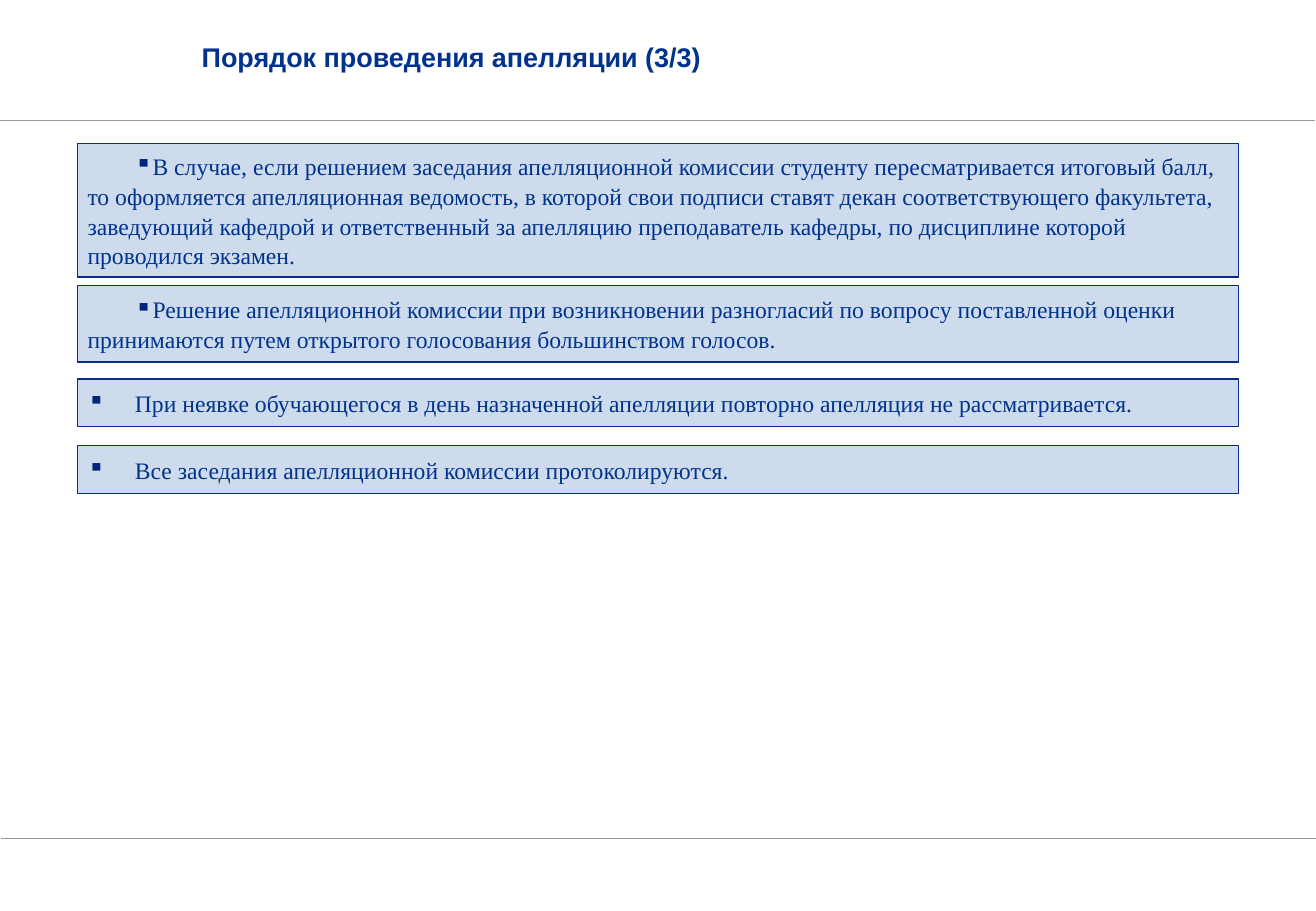
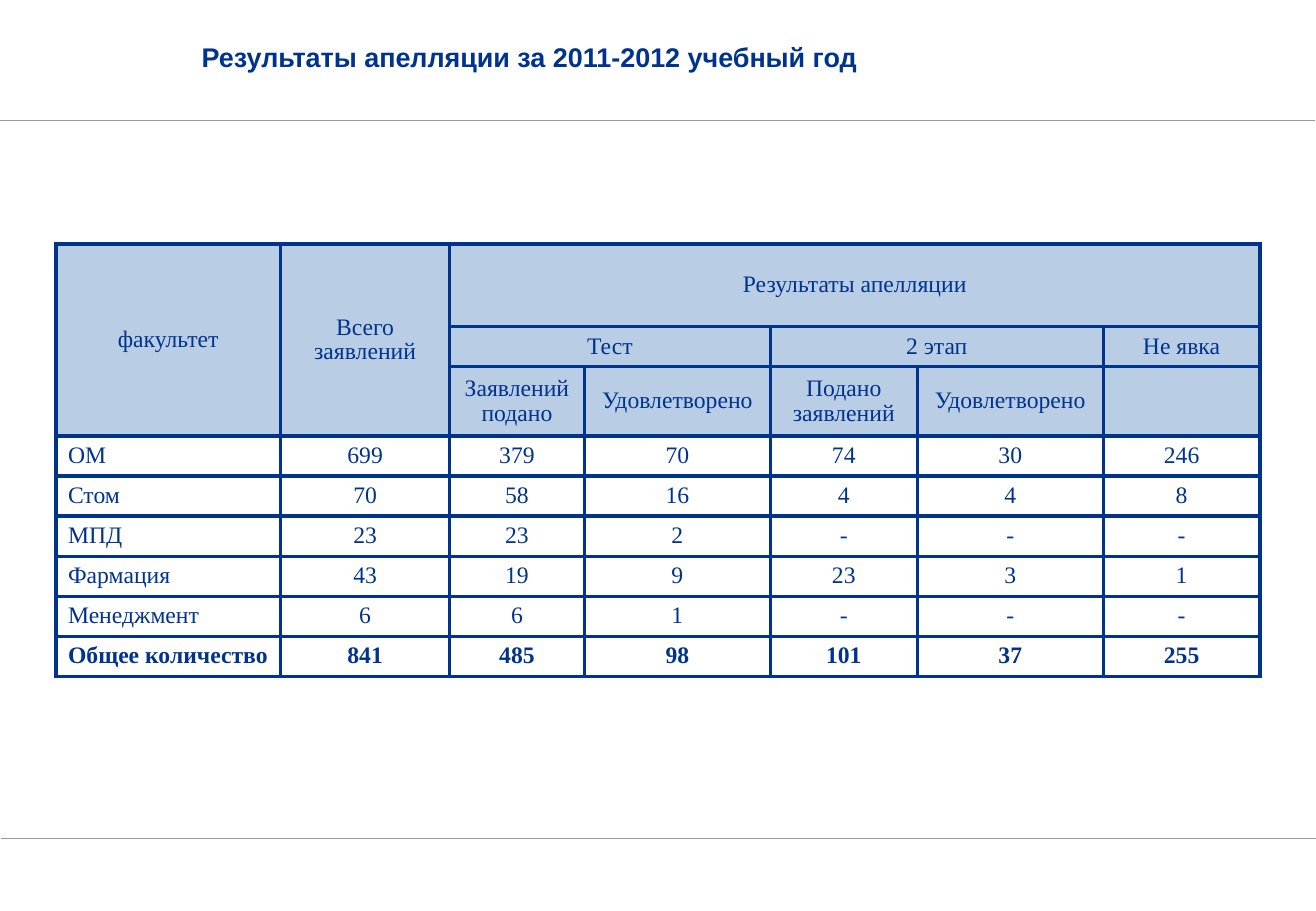
from dataclasses import dataclass

from lxml.etree import SubElement
from pptx import Presentation
from pptx.dml.color import RGBColor
from pptx.enum.shapes import MSO_CONNECTOR, MSO_SHAPE
from pptx.enum.text import MSO_ANCHOR, MSO_AUTO_SIZE, PP_ALIGN
from pptx.oxml import parse_xml
from pptx.oxml.ns import nsdecls, qn
from pptx.util import Inches, Pt


@dataclass
class Theme:
    ink: str = "00338D"
    edge: str = "0C2D83"
    mark: str = "00257A"
    pale: str = "B9CDE5"
    rule: str = "97989A"
    head: str = "Arial"
    body: str = "Times New Roman"
    big: int = 16
    size: int = 14
    grid: float = 2.25


theme = Theme()


def color(code):
    return RGBColor.from_string(code)


def write(frame, text, font=theme.body, size=theme.size, bold=False,
          align=PP_ALIGN.LEFT, space=1.0, indent=None):
    frame.word_wrap = True
    frame.vertical_anchor = MSO_ANCHOR.MIDDLE
    for num, line in enumerate(text.split("\n")):
        para = frame.add_paragraph() if num else frame.paragraphs[0]
        if indent:
            props = para._p.get_or_add_pPr()
            left, first = indent
            props.set("marL", str(Inches(left)))
            props.set("indent", str(Inches(first)))
            tint = SubElement(props, qn("a:buClr"))
            SubElement(tint, qn("a:srgbClr"), val=theme.mark)
            SubElement(props, qn("a:buChar"), char="▪")
        para.alignment = align
        para.line_spacing = space
        run = para.add_run()
        run.text = line
        run.font.name = font
        run.font.size = Pt(size)
        run.font.bold = bold
        run.font.color.rgb = color(theme.ink)


deck = Presentation()
deck.slide_width = Inches(10.83)
deck.slide_height = Inches(7.5)

slides = []
for text in ("Порядок проведения апелляции (3/3)",
             "Результаты апелляции за 2011-2012 учебный год"):
    slide = deck.slides.add_slide(deck.slide_layouts[5])
    slides.append(slide)
    for left, top in ((0, 0.99), (0.01, 6.9)):
        rule = slide.shapes.add_connector(
            MSO_CONNECTOR.STRAIGHT, Inches(left), Inches(top),
            Inches(left + 10.82), Inches(top))
        rule.line.color.rgb = color(theme.rule)
        rule.line.width = Pt(0.5)
        SubElement(rule._element.spPr, qn("a:effectLst"))
    title = slide.shapes.title
    title.left, title.top = Inches(1.56), Inches(-0.03)
    title.width, title.height = Inches(9.12), Inches(0.99)
    title.text_frame.auto_size = MSO_AUTO_SIZE.NONE
    write(title.text_frame, text, font=theme.head, size=theme.big, bold=True)

order, result = slides

inset = (0, 0.39)
hang = (0.39, -0.39)
notes = (
    (1.18, 1.1, inset,
     "В случае, если решением заседания апелляционной комиссии студенту "
     "пересматривается итоговый балл, то оформляется апелляционная ведомость, "
     "в которой свои подписи ставят декан соответствующего факультета, "
     "заведующий кафедрой и ответственный за апелляцию преподаватель кафедры, "
     "по дисциплине которой проводился экзамен."),
    (2.35, 0.63, inset,
     "Решение апелляционной комиссии при возникновении разногласий по вопросу "
     "поставленной оценки принимаются путем открытого голосования "
     "большинством голосов."),
    (3.12, 0.39, hang,
     "При неявке обучающегося в день назначенной апелляции повторно "
     "апелляция не рассматривается."),
    (3.67, 0.39, hang,
     "Все заседания апелляционной комиссии протоколируются."),
)
for top, height, indent, text in notes:
    box = order.shapes.add_shape(MSO_SHAPE.BEVEL, Inches(0.64), Inches(top),
                                 Inches(9.55), Inches(height))
    box.adjustments[0] = 0
    box.shadow.inherit = False
    box.fill.solid()
    box.fill.fore_color.rgb = color(theme.pale)
    tint = box._element.spPr.find(qn("a:solidFill"))[0]
    SubElement(tint, qn("a:alpha"), val="70000")
    box.line.color.rgb = color(theme.edge)
    box.line.width = Pt(0.75)
    frame = box.text_frame
    frame.margin_left = frame.margin_right = Inches(0.08)
    frame.margin_top = frame.margin_bottom = Inches(0.08)
    write(frame, text, space=1.05, indent=indent)

rows = (
    ("факультет", "Всего заявлений", "Результаты апелляции", "", "", "", ""),
    ("", "", "Тест", "", "2 этап", "", "Не явка"),
    ("", "", "Заявлений подано", "Удовлетворено", "Подано\nзаявлений",
     "Удовлетворено", ""),
    ("ОМ", "699", "379", "70", "74", "30", "246"),
    ("Стом", "70", "58", "16", "4", "4", "8"),
    ("МПД", "23", "23", "2", "-", "-", "-"),
    ("Фармация", "43", "19", "9", "23", "3", "1"),
    ("Менеджмент", "6", "6", "1", "-", "-", "-"),
    ("Общее количество", "841", "485", "98", "101", "37", "255"),
)
top_rows = 3
widths = (1.85, 1.39, 1.11, 1.53, 1.21, 1.53, 1.29)
heights = (0.68, 0.33, 0.57) + (0.33,) * (len(rows) - top_rows)
spans = ((0, 0, 2, 0), (0, 1, 2, 1), (0, 2, 0, 6), (1, 2, 1, 3), (1, 4, 1, 5))

table = result.shapes.add_table(
    len(rows), len(widths), Inches(0.46), Inches(2.01),
    Inches(sum(widths)), Inches(sum(heights))).table
table.first_row = table.horz_banding = False
for col, width in zip(table.columns, widths):
    col.width = Inches(width)
for row, height in zip(table.rows, heights):
    row.height = Inches(height)
for top, left, end, right in spans:
    table.cell(top, left).merge(table.cell(end, right))

for num, row in enumerate(rows):
    for col, text in enumerate(row):
        cell = table.cell(num, col)
        if num < top_rows:
            cell.fill.solid()
            cell.fill.fore_color.rgb = color(theme.pale)
        else:
            cell.fill.background()
        props = cell._tc.get_or_add_tcPr()
        for spot, side in enumerate(("lnL", "lnR", "lnT", "lnB")):
            props.insert(spot, parse_xml(
                f'<a:{side} {nsdecls("a")} w="{Pt(theme.grid)}"><a:solidFill>'
                f'<a:srgbClr val="{theme.ink}"/></a:solidFill></a:{side}>'))
        cell.vertical_anchor = MSO_ANCHOR.MIDDLE
        if text:
            name = num >= top_rows and col == 0
            write(cell.text_frame, text, space=0.95,
                  bold=num == len(rows) - 1,
                  align=PP_ALIGN.JUSTIFY if name else PP_ALIGN.CENTER)

deck.save("out.pptx")
